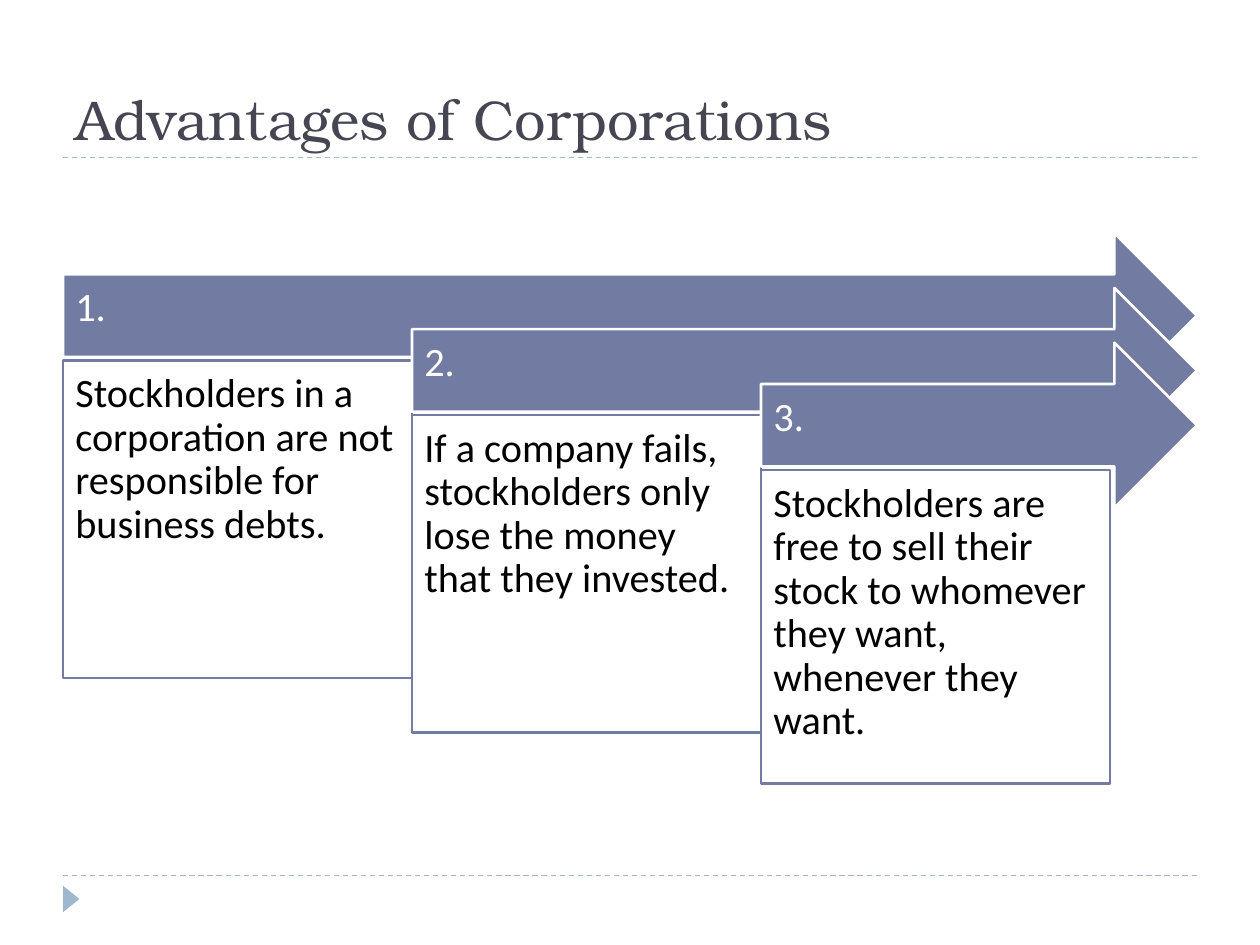
from dataclasses import dataclass

from lxml import etree
from pptx import Presentation
from pptx.dml.color import RGBColor
from pptx.enum.dml import MSO_LINE
from pptx.enum.shapes import MSO_CONNECTOR, MSO_SHAPE
from pptx.enum.text import MSO_ANCHOR, PP_ALIGN
from pptx.oxml.ns import qn
from pptx.util import Inches, Pt

STRAIGHT = MSO_CONNECTOR.STRAIGHT
ARROW, RECT, TRIANGLE = MSO_SHAPE.RIGHT_ARROW, MSO_SHAPE.RECTANGLE, MSO_SHAPE.ISOSCELES_TRIANGLE
TOP, MIDDLE, BOTTOM = MSO_ANCHOR.TOP, MSO_ANCHOR.MIDDLE, MSO_ANCHOR.BOTTOM
LEFT = PP_ALIGN.LEFT
DASH = MSO_LINE.DASH


@dataclass(frozen=True)
class Theme:
    white = RGBColor.from_string("FFFFFF")
    black = RGBColor.from_string("000000")
    title = RGBColor.from_string("464653")
    accent = RGBColor.from_string("727CA3")
    trim = RGBColor.from_string("9FB8CD")
    title_font = "TeX Gyre Bonum"
    body_font = "Calibri"
    title_size = Pt(32)
    body_size = Pt(23)
    outline = Pt(1.5)
    rule = Pt(0.75)


THEME = Theme()

STEPS = [
    ("1.", "Stockholders in a corporation are not responsible for business debts.", 2.52),
    ("2.", "If a company fails, stockholders only lose the money that they invested.", 2.52),
    ("3.", "Stockholders are free to sell their stock to whomever they want, whenever they want.", 2.49),
]


def write(sp, text, font, size, color, anchor, insets):
    """Set one left-aligned paragraph; insets are left, top, right, bottom."""
    tf = sp.text_frame
    tf.word_wrap = True
    tf.vertical_anchor = anchor
    tf.margin_left, tf.margin_top, tf.margin_right, tf.margin_bottom = map(Inches, insets)
    p = tf.paragraphs[0]
    p.text = text
    p.alignment = LEFT
    p.font.name, p.font.size = font, size
    p.font.color.rgb = color
    return p


def add_block(slide, preset, box, fill, line=None):
    sp = slide.shapes.add_shape(preset, *map(Inches, box))
    sp.shadow.inherit = False
    sp.fill.solid()
    sp.fill.fore_color.rgb = fill
    if line is None:
        sp.line.fill.background()
    else:
        sp.line.color.rgb = line
        sp.line.width = THEME.outline
    return sp


def add_rule(slide, left, top, width):
    line = slide.shapes.add_connector(
        STRAIGHT, Inches(left), Inches(top), Inches(left + width), Inches(top))
    line.line.color.rgb = THEME.trim
    line.line.width = THEME.rule
    line.line.dash_style = DASH
    etree.SubElement(line._element.spPr, qn("a:effectLst"))


def add_title(slide, left, top, width, height):
    sp = slide.shapes.add_textbox(*map(Inches, (left, top, width, height)))
    write(sp, "Advantages of Corporations", THEME.title_font, THEME.title_size,
          THEME.title, BOTTOM, (0.1, 0.05, 0.1, 0.05))
    add_rule(slide, left, top + height, width)


def add_footer(slide, left, top, width):
    add_rule(slide, left, top, width)
    marker = add_block(slide, TRIANGLE, (left - 0.04, top + 0.12, 0.21, 0.13), THEME.trim)
    marker.rotation = 90


def add_steps(slide, left, top, width):
    """Overlapping arrows that share a right edge, each with a box below."""
    step_x, step_y = 2.77, 0.87 / 2
    arrow_height, box_offset = 1.31, 1.01
    for i, (number, text, box_height) in enumerate(STEPS):
        x, y = left + i * step_x, top + i * step_y
        arrow = add_block(slide, ARROW, (x, y, width - i * step_x, arrow_height),
                          THEME.accent, THEME.white)
        box = add_block(slide, RECT, (x, y + box_offset, step_x, box_height),
                        THEME.white, THEME.accent)
        for sp, words, color, anchor, insets in (
            (arrow, number, THEME.white, MIDDLE, (0.1, 0.1, 0.28, 0.21)),
            (box, text, THEME.black, TOP, (0.1, 0.1, 0.1, 0.1)),
        ):
            p = write(sp, words, THEME.body_font, THEME.body_size, color, anchor, insets)
            p.line_spacing = 0.9


def main():
    prs = Presentation()
    prs.slide_width, prs.slide_height = Inches(10), Inches(7.5)
    slide = prs.slides.add_slide(prs.slide_layouts[6])
    left, width = 0.5, 9
    add_footer(slide, left, 6.95, width)
    add_title(slide, left, 0.17, width, 1.08)
    add_steps(slide, left, 1.85, width)
    prs.save("out.pptx")


if __name__ == "__main__":
    main()
